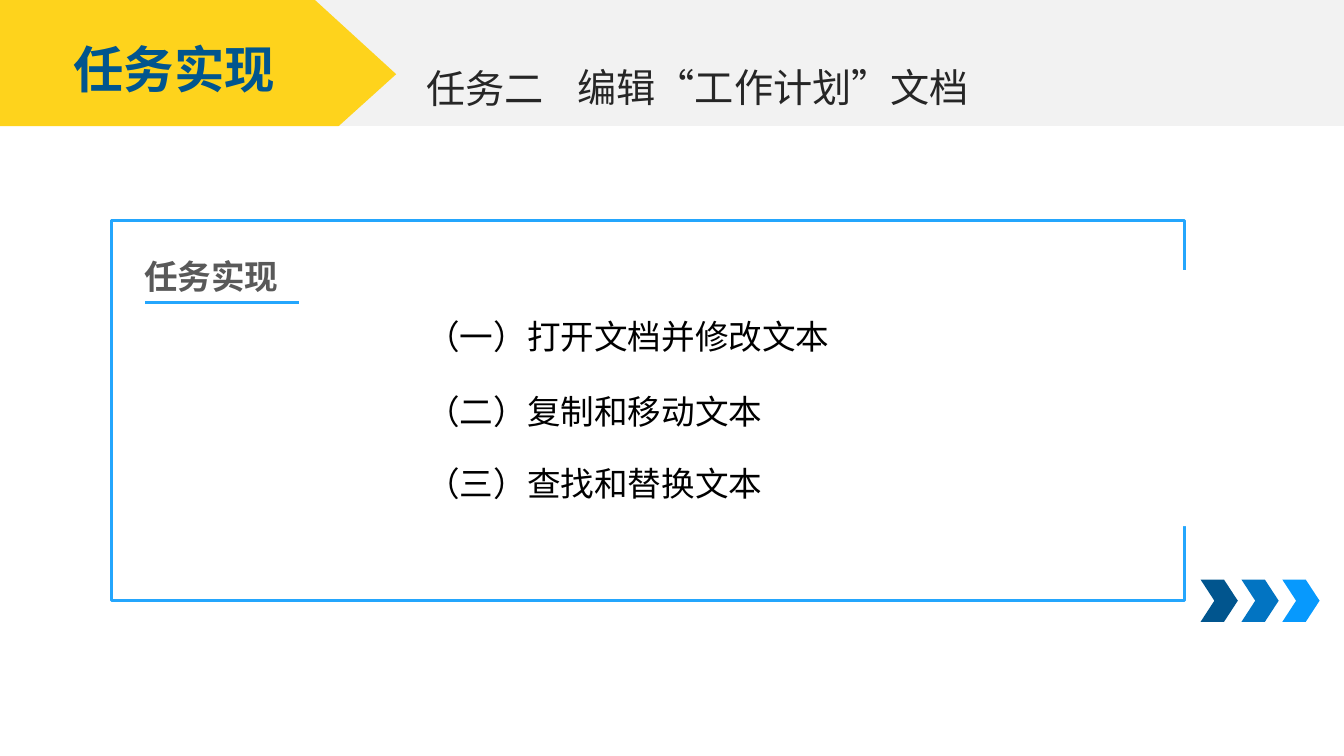
from dataclasses import dataclass

from lxml import etree
from pptx import Presentation
from pptx import util as u
from pptx.dml.color import RGBColor
from pptx.enum import lang, shapes, text
from pptx.oxml import ns


@dataclass(frozen=True)
class Theme:
    white: str = "FFFFFF"
    band: str = "F2F2F2"
    yellow: str = "FED31C"
    frame: str = "24A6FD"
    navy: str = "01558E"
    heading: str = "595959"
    title: str = "262626"
    body: str = "000000"
    chevrons: tuple = ("01558E", "0274C2", "0799FD")
    latin: str = "Arial"
    chinese: str = "Noto Sans CJK SC"
    tag_size: int = 36
    title_size: int = 28
    body_size: int = 24


theme = Theme()
deck = Presentation()
deck.slide_width, deck.slide_height = u.Pt(960), u.Pt(540)
page = deck.slides.add_slide(deck.slide_layouts[6])


def paint(shape, fill, line=None):
    shape.shadow.inherit = False
    shape.fill.solid()
    shape.fill.fore_color.rgb = RGBColor.from_string(fill)
    if line:
        shape.line.color.rgb = RGBColor.from_string(line)
        shape.line.width = u.Pt(2)
    else:
        shape.line.fill.background()


def add_text(words, left, top, width, height, size, color, latin=theme.latin, bold=False, wrap=True):
    box = page.shapes.add_textbox(u.Pt(left), u.Pt(top), u.Pt(width), u.Pt(height))
    box.text_frame.word_wrap = wrap
    box.text_frame.text = words
    para = box.text_frame.paragraphs[0]
    font = para.runs[0].font
    font.name, font.size, font.bold = latin, u.Pt(size), bold
    font.color.rgb = RGBColor.from_string(color)
    font.language_id = lang.MSO_LANGUAGE_ID.SIMPLIFIED_CHINESE
    east_asian = etree.Element(ns.qn("a:ea"), typeface=theme.chinese)
    para.runs[0]._r.rPr.find(ns.qn("a:latin")).addnext(east_asian)
    return para


# Frame, its gap on the right, and the grey header band
for left, top, width, height, fill, line in (
    (79.9, 157.7, 766, 271.4, theme.white, theme.frame),
    (831.6, 193, 25.9, 182.9, theme.white, None),
    (183.6, 0, 776.4, 90, theme.band, None),
):
    block = page.shapes.add_shape(
        shapes.MSO_SHAPE.RECTANGLE, u.Pt(left), u.Pt(top), u.Pt(width), u.Pt(height))
    paint(block, fill, line)

# Underlined heading inside the frame
underline = page.shapes.add_connector(
    shapes.MSO_CONNECTOR.STRAIGHT, u.Pt(103.7), u.Pt(216), u.Pt(213.8), u.Pt(216))
underline.line.color.rgb = RGBColor.from_string(theme.frame)
underline.line.width = u.Pt(2)
etree.SubElement(underline._element.spPr, ns.qn("a:effectLst"))
heading = add_text("任务实现", 95.8, 173.5, 148.3, 38.9, theme.body_size, theme.heading, bold=True)
heading.alignment = text.PP_ALIGN.JUSTIFY
heading.line_spacing = 1.2

# Yellow pointer with the section name
outline = page.shapes.build_freeform(0, 0, scale=u.Pt(1))
outline.add_line_segments([(225, 0), (283, 53), (242, 90), (0, 90)], close=True)
paint(outline.convert_to_shape(), theme.yellow)
section = add_text("任务实现", 44.6, 23.8, 159.8, 51.1, theme.tag_size, theme.navy,
                   latin=theme.chinese, bold=True, wrap=False)
section.alignment = text.PP_ALIGN.CENTER

# Task title
add_text("任务二", 297.4, 42.5, 107.3, 41, theme.title_size, theme.title)
add_text("编辑“工作计划”文档", 405.4, 41.8, 335.5, 41, theme.title_size, theme.title)

# Steps
for words, top, width in (
    ("（一）打开文档并修改文本", 221.8, 305.3),
    ("（二）复制和移动文本", 275.8, 257),
    ("（三）查找和替换文本", 326.9, 257),
):
    add_text(words, 297.4, top, width, 36, theme.body_size, theme.body, wrap=False)

# Chevrons
for index, color in enumerate(theme.chevrons):
    chevron = page.shapes.add_shape(
        shapes.MSO_SHAPE.CHEVRON, u.Pt(857.6 + 29.2 * index), u.Pt(414), u.Pt(26.6), u.Pt(30.2))
    chevron.adjustments[0] = 0.37
    paint(chevron, color)

deck.save("out.pptx")
